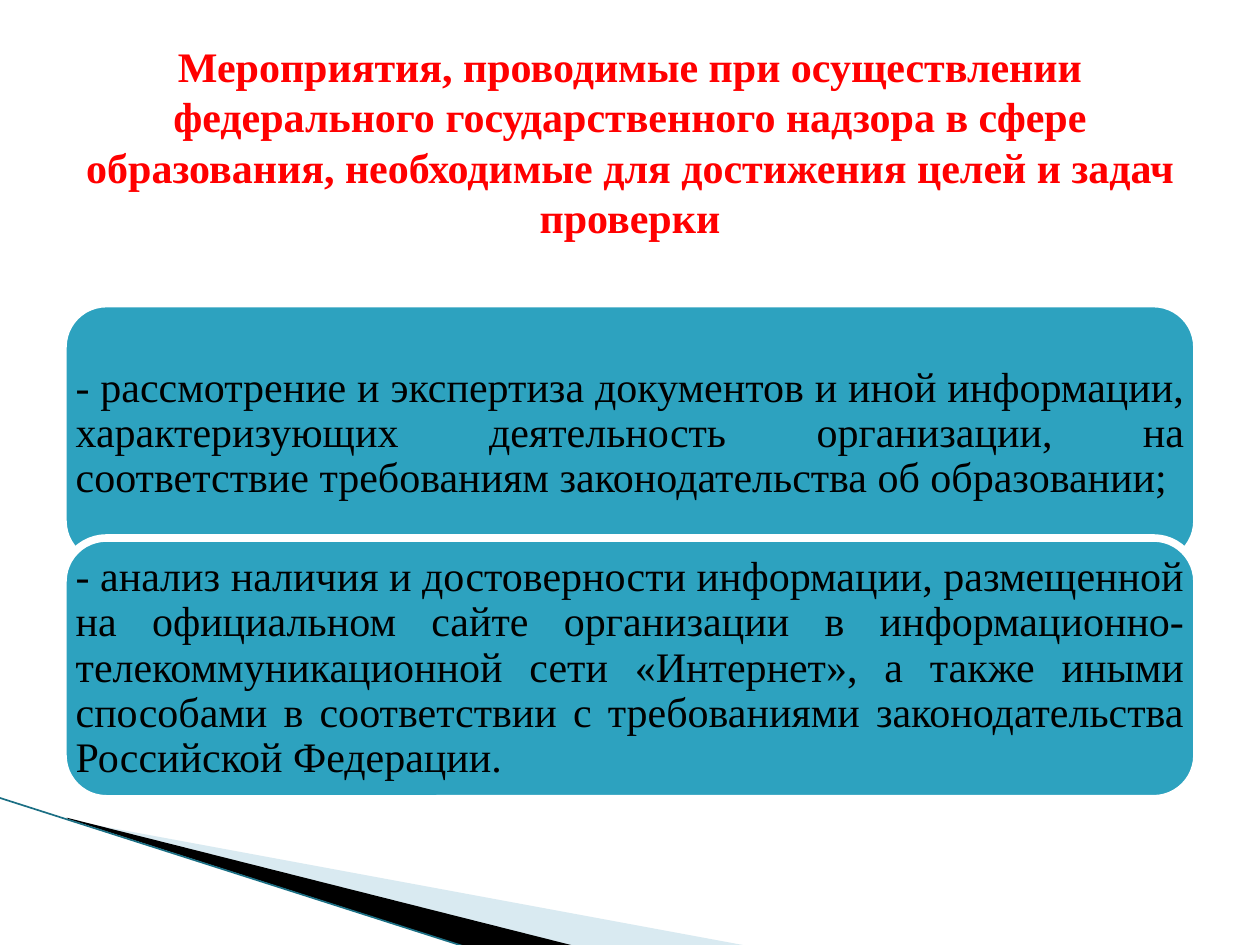
from dataclasses import dataclass

from lxml import etree
from pptx import Presentation
from pptx.dml.color import RGBColor
from pptx.enum.shapes import MSO_CONNECTOR, MSO_SHAPE
from pptx.enum.text import MSO_ANCHOR, PP_ALIGN
from pptx.oxml.ns import qn
from pptx.slide import Slide
from pptx.text.text import TextFrame
from pptx.util import Inches, Pt

RED = RGBColor(0xFF, 0x00, 0x00)
BLACK = RGBColor(0x00, 0x00, 0x00)
WHITE = RGBColor(0xFF, 0xFF, 0xFF)
TEAL = RGBColor(0x2D, 0xA2, 0xBF)
DARK_TEAL = RGBColor(0x1B, 0x6F, 0x84)
PALE_BLUE = RGBColor(0xA0, 0xCB, 0xDC)

FONT = "Times New Roman"
LEFT, WIDTH = 0.5, 9
CARD_TOP, CARD_HEIGHT, CARD_STEP = 2.41, 2.07, 1.86

TITLE = (
    "Мероприятия, проводимые при осуществлении федерального государственного "
    "надзора в сфере образования, необходимые для достижения целей и задач проверки"
)
MEASURES = [
    "- рассмотрение и экспертиза документов и иной информации, "
    "характеризующих деятельность организации, на соответствие требованиям "
    "законодательства об образовании;",
    "- анализ наличия и достоверности информации, размещенной на официальном "
    "сайте организации в информационно-телекоммуникационной сети «Интернет», "
    "а также иными способами в соответствии с требованиями законодательства "
    "Российской Федерации.",
]


@dataclass(frozen=True)
class Wedge:
    points: list[tuple[float, float]]
    color: RGBColor
    opacity: int = 100


WEDGES = [
    Wedge([(0.55, 6.51), (5.95, 7.51), (4.56, 7.51), (0.55, 6.5)], PALE_BLUE, 40),
    Wedge([(0.53, 6.49), (4.57, 7.51), (3.72, 7.52), (0.54, 6.5)], BLACK),
]


def write_text(frame: TextFrame, text: str, color: RGBColor, align: PP_ALIGN,
               bold: bool = False, line_spacing: float = 1.0) -> None:
    frame.word_wrap = True
    frame.vertical_anchor = MSO_ANCHOR.MIDDLE
    paragraph = frame.paragraphs[0]
    paragraph.alignment = align
    paragraph.line_spacing = line_spacing
    run = paragraph.add_run()
    run.text = text
    run.font.name = FONT
    run.font.size = Pt(24)
    run.font.bold = bold
    run.font.color.rgb = color


def draw_wedge(slide: Slide, wedge: Wedge) -> None:
    start, *others = [(Inches(x), Inches(y)) for x, y in wedge.points]
    builder = slide.shapes.build_freeform(*start)
    builder.add_line_segments(others, close=True)
    shape = builder.convert_to_shape()
    shape.shadow.inherit = False
    shape.line.fill.background()
    shape.fill.solid()
    shape.fill.fore_color.rgb = wedge.color
    if wedge.opacity < 100:
        color_element = shape.fill._xPr.find(".//" + qn("a:srgbClr"))
        alpha = etree.SubElement(color_element, qn("a:alpha"))
        alpha.set("val", str(wedge.opacity * 1000))


def draw_edge_line(slide: Slide) -> None:
    line = slide.shapes.add_connector(
        MSO_CONNECTOR.STRAIGHT, Inches(-0.01), Inches(6.33), Inches(3.71), Inches(7.52))
    line.line.color.rgb = DARK_TEAL
    line.line.width = Pt(0.95)
    etree.SubElement(line._element.spPr, qn("a:effectLst"))


def draw_card(slide: Slide, top: float, text: str) -> None:
    card = slide.shapes.add_shape(
        MSO_SHAPE.ROUNDED_RECTANGLE,
        Inches(LEFT), Inches(top), Inches(WIDTH), Inches(CARD_HEIGHT))
    card.shadow.inherit = False
    card.fill.solid()
    card.fill.fore_color.rgb = TEAL
    card.line.color.rgb = WHITE
    card.line.width = Pt(4.33)
    frame = card.text_frame
    # The rounded corners already inset the text
    frame.margin_left = frame.margin_right = Inches(0)
    frame.margin_top = frame.margin_bottom = Inches(0)
    write_text(frame, text, BLACK, PP_ALIGN.JUSTIFY, line_spacing=0.9)


def main() -> None:
    presentation = Presentation()
    presentation.slide_width = Inches(10)
    presentation.slide_height = Inches(7.5)
    slide = presentation.slides.add_slide(presentation.slide_layouts[6])

    # Corner decoration
    for wedge in WEDGES:
        draw_wedge(slide, wedge)
    draw_edge_line(slide)

    # Measures
    for index, measure in enumerate(MEASURES):
        draw_card(slide, CARD_TOP + index * CARD_STEP, measure)

    # Title
    title = slide.shapes.add_textbox(
        Inches(LEFT), Inches(0.3), Inches(WIDTH), Inches(1.64))
    write_text(title.text_frame, TITLE, RED, PP_ALIGN.CENTER, bold=True)

    presentation.save("out.pptx")


if __name__ == "__main__":
    main()
